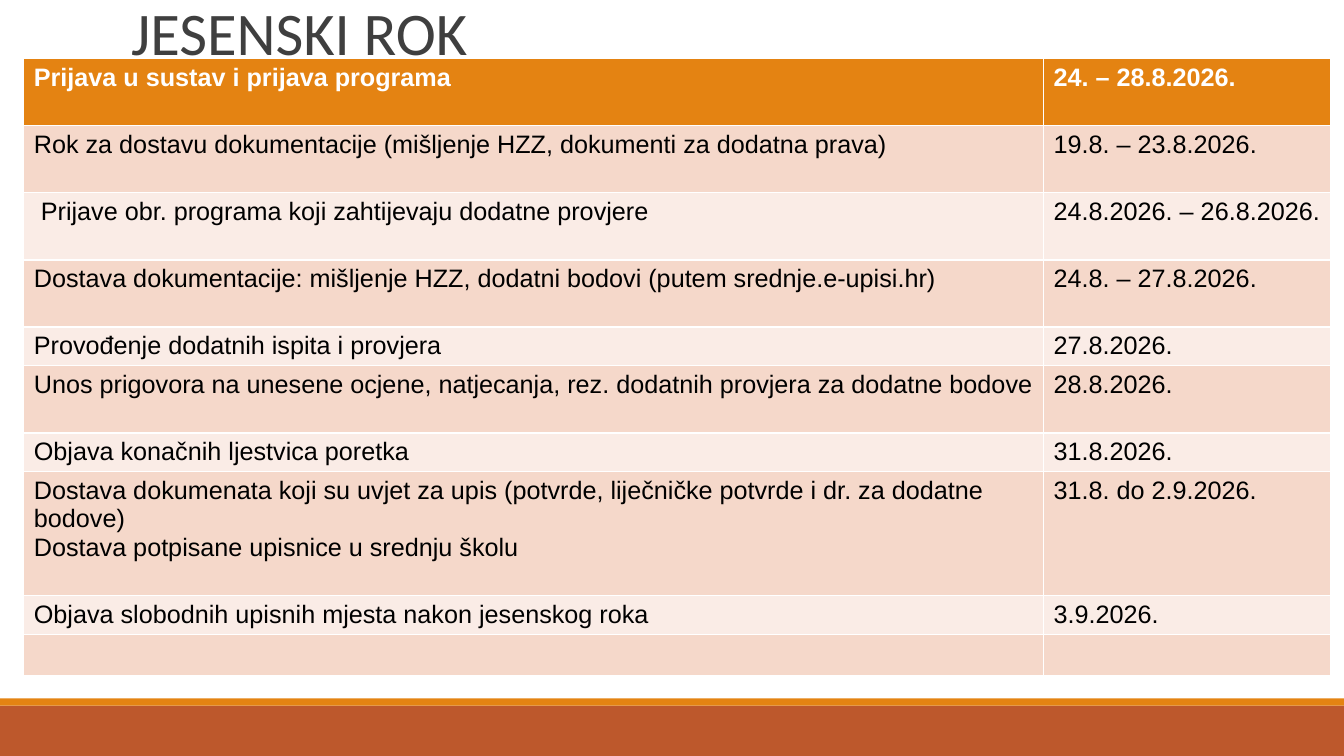
"""Build the slide with the autumn enrolment deadlines."""
import pptx
import pptx.dml.color
import pptx.enum.shapes
import pptx.enum.text
import pptx.util

Cm = pptx.util.Cm
Pt = pptx.util.Pt

COLORS = {
    "heading": "3F3F3F",
    "header": "E48312",
    "footer": "BD582C",
    "odd": "F5D8CA",
    "even": "FAECE6",
    "white": "FFFFFF",
    "black": "000000",
}
TALL, SHORT, DOCUMENTS = 1.69, 0.98, 3.12

deadlines = [
    (TALL, ["Prijava u sustav i prijava programa"], "24. – 28.8.2026."),
    (TALL, ["Rok za dostavu dokumentacije (mišljenje HZZ, dokumenti za dodatna prava)"],
     "19.8. – 23.8.2026."),
    (TALL, [" Prijave obr. programa koji zahtijevaju dodatne provjere"],
     "24.8.2026. – 26.8.2026."),
    (TALL, ["Dostava dokumentacije: mišljenje HZZ, dodatni bodovi (putem srednje.e-upisi.hr)"],
     "24.8. – 27.8.2026."),
    (SHORT, ["Provođenje dodatnih ispita i provjera"], "27.8.2026."),
    (TALL, ["Unos prigovora na unesene ocjene, natjecanja, rez. dodatnih provjera za dodatne bodove"],
     "28.8.2026."),
    (SHORT, ["Objava konačnih ljestvica poretka"], "31.8.2026."),
    (DOCUMENTS, ["Dostava dokumenata koji su uvjet za upis (potvrde, liječničke potvrde i dr. za dodatne bodove)",
                 "Dostava potpisane upisnice u srednju školu"], "31.8. do 2.9.2026."),
    (SHORT, ["Objava slobodnih upisnih mjesta nakon jesenskog roka"], "3.9.2026."),
    (SHORT, [], ""),
]


def rgb(name):
    return pptx.dml.color.RGBColor.from_string(COLORS[name])


def add_text(paragraph, text, font_name, size, color, bold=False):
    run = paragraph.add_run()
    run.text = text
    run.font.name = font_name
    run.font.size = Pt(size)
    run.font.bold = bold
    run.font.color.rgb = rgb(color)


presentation = pptx.Presentation()
presentation.slide_width = Cm(33.87)
presentation.slide_height = Cm(19.05)
slide = presentation.slides.add_slide(presentation.slide_layouts[5])

for color, top, height in [("footer", 17.78, 1.27), ("header", 17.6, 0.18)]:
    band = slide.shapes.add_shape(
        pptx.enum.shapes.MSO_SHAPE.RECTANGLE, 0, Cm(top), presentation.slide_width, Cm(height))
    band.shadow.inherit = False
    band.fill.solid()
    band.fill.fore_color.rgb = rgb(color)
    band.line.fill.background()

heading = slide.shapes.title
heading.left, heading.top, heading.width, heading.height = Cm(3.05), Cm(0), Cm(27.94), Cm(1.85)
heading.text_frame.auto_size = pptx.enum.text.MSO_AUTO_SIZE.NONE
heading.text_frame.vertical_anchor = pptx.enum.text.MSO_ANCHOR.BOTTOM
heading_line = heading.text_frame.paragraphs[0]
heading_line.alignment = pptx.enum.text.PP_ALIGN.LEFT
heading_line.line_spacing = 0.85
add_text(heading_line, "JESENSKI ROK", "Calibri", 43.2, "heading")

total_height = sum(height for height, steps, date in deadlines)
schedule = slide.shapes.add_table(
    len(deadlines), 2, Cm(0.6), Cm(1.48), Cm(32.94), Cm(total_height)).table
schedule.columns[0].width = Cm(25.7)
schedule.columns[1].width = Cm(7.24)

for index, (height, steps, date) in enumerate(deadlines):
    schedule.rows[index].height = Cm(height)
    is_header = index == 0
    fill = "header" if is_header else "odd" if index % 2 else "even"
    for column, lines in enumerate([steps, [date] if date else []]):
        cell = schedule.cell(index, column)
        cell.fill.solid()
        cell.fill.fore_color.rgb = rgb(fill)
        for number, line in enumerate(lines):
            frame = cell.text_frame
            paragraph = frame.add_paragraph() if number else frame.paragraphs[0]
            add_text(paragraph, line, "Arial", 18, "white" if is_header else "black", is_header)

presentation.save("out.pptx")
